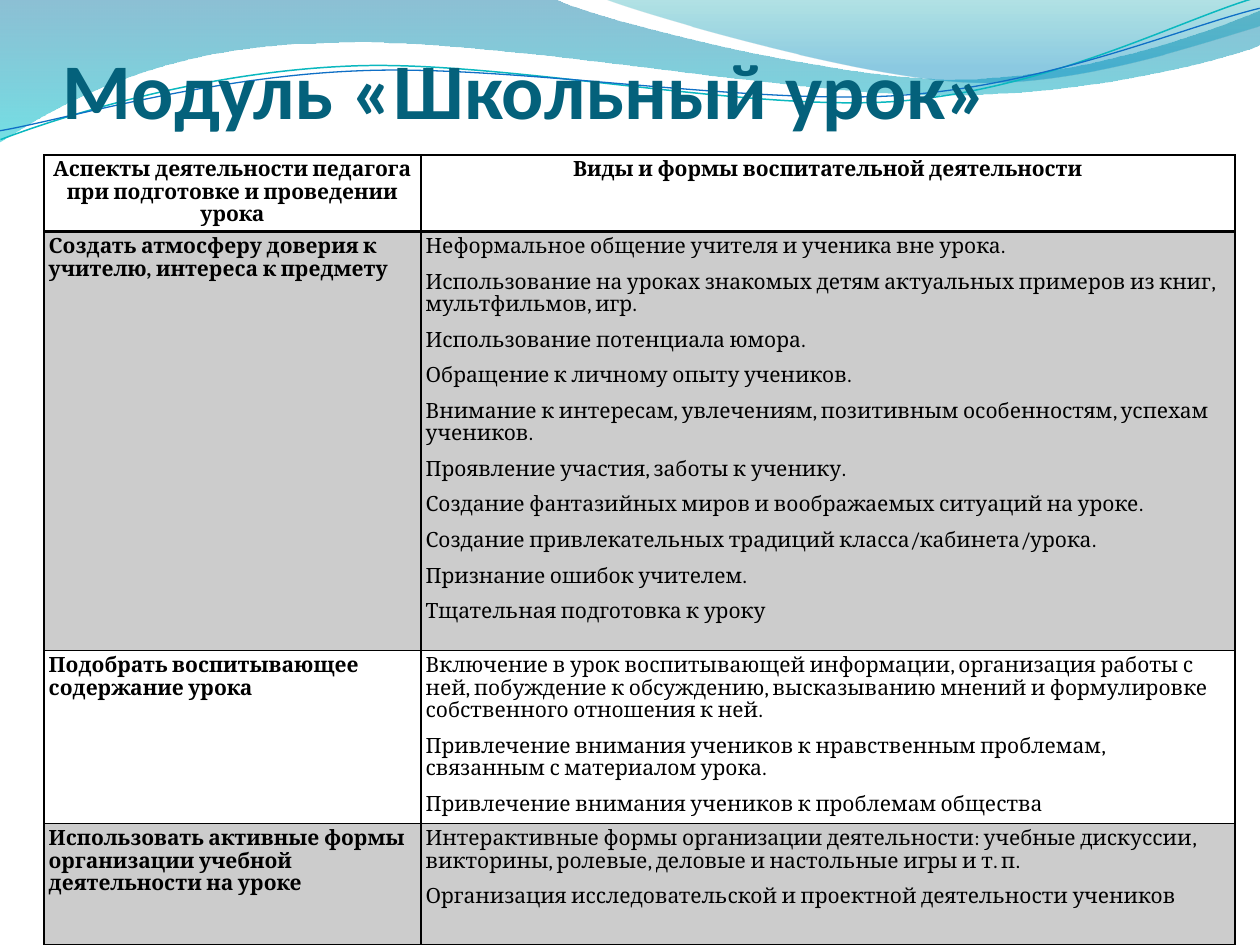
from lxml.etree import SubElement
from pptx import Presentation
from pptx.dml.color import RGBColor
from pptx.enum.text import MSO_ANCHOR, PP_ALIGN
from pptx.oxml.ns import qn
from pptx.util import Emu, Pt

EMU_PER_PX = 914400 / 126
CURVE_TILT = 357.3
NO_BREAK_SPACE = chr(160)

BLACK = RGBColor(0x00, 0x00, 0x00)
TITLE_BLUE = RGBColor(0x04, 0x61, 0x7B)
DEEP_BLUE = RGBColor(0x00, 0x74, 0xA1)
CYAN = RGBColor(0x00, 0xC6, 0xCF)
TEAL = RGBColor(0x00, 0xA1, 0xA9)
SKY_BLUE = RGBColor(0x00, 0x8B, 0xBF)
LINE_TEAL = RGBColor(0x0A, 0xB8, 0xBF)
LINE_BLUE = RGBColor(0x0F, 0x6F, 0xC6)

WIDE_WAVE = ((0, 0), [
    (554, -1), (600, 21, 837, 79, 955, 79), (1075, 79, 1207, 33, 1260, 11),
    (1261, 45), (1239, 55, 1096, 96, 940, 95), (784, 95, 481, 35, 324, 43),
    (161, 45, 58, 105, -1, 142), (0, 0)])
RIGHT_WAVE = ((604, -1), [
    (641, 14, 859, 78, 969, 82), (1079, 87, 1211, 40, 1260, 26), (1260, 0),
    (604, -1)])
TEAL_CURVE = ((-2, 110), [
    (59, 90, 200, 52, 350, 53), (499, 53, 745, 118, 896, 114),
    (1049, 109, 1184, 45, 1260, 27)])
BLUE_CURVE = ((-2, 101), [
    (57, 94, 207, 57, 357, 58), (509, 58, 750, 112, 902, 108),
    (1052, 104, 1188, 52, 1262, 38)])

HEADER = ("Аспекты деятельности педагога при подготовке и проведении урока",
          "Виды и формы воспитательной деятельности")
ASPECTS = [
    ("Создать атмосферу доверия к учителю, интереса к предмету", [
        "Неформальное общение учителя и ученика вне урока.",
        "Использование на уроках знакомых детям актуальных примеров из книг, мультфильмов, игр.",
        "Использование потенциала юмора.",
        "Обращение к личному опыту учеников.",
        "Внимание к интересам, увлечениям, позитивным особенностям, успехам учеников.",
        "Проявление участия, заботы к ученику.",
        "Создание фантазийных миров и воображаемых ситуаций на уроке.",
        "Создание привлекательных традиций класса/кабинета/урока.",
        "Признание ошибок учителем.",
        "Тщательная подготовка к уроку"]),
    ("Подобрать воспитывающее содержание урока", [
        "Включение~в урок воспитывающей информации, организация~работы~с ней, "
        "побуждение к обсуждению, высказыванию~мнений и формулировке "
        "собственного~отношения к ней.",
        "Привлечение~внимания учеников к нравственным~проблемам, "
        "связанным~с материалом урока.",
        "Привлечение внимания учеников~к проблемам общества"]),
    ("Использовать активные формы организации учебной деятельности на уроке", [
        "Интерактивные формы организации деятельности: учебные дискуссии, "
        "викторины, ролевые, деловые и настольные игры и т. п.",
        "Организация исследовательской и проектной деятельности учеников"]),
]


def px(length):
    """Turn pixels into EMU."""
    return Emu(round(length * EMU_PER_PX))


def set_alpha(colour, percent):
    """Give a colour element an opacity."""
    SubElement(colour, qn("a:alpha")).set("val", str(percent * 1000))


class SlideWriter:
    """Hold the style and the current slide."""

    title_font = "Calibri"
    body_font = "Cambria"
    body_size = 12
    leading = Pt(12.8)
    gap = Pt(7.5)
    inset = Pt(2.7)

    def __init__(self, slide):
        """Keep the slide to draw on."""
        self.slide = slide

    def outline(self, start, segments, closed):
        """Build a freeform whose six-number segments are cubic curves."""
        builder = self.slide.shapes.build_freeform(*map(px, start))
        builder.add_line_segments(
            [(px(part[-2]), px(part[-1])) for part in segments], close=closed)
        shape = builder.convert_to_shape()
        shape.shadow.inherit = False
        for step, part in zip(shape._element.xpath(".//a:path/a:lnTo"), segments):
            if len(part) == 6:
                step.tag = qn("a:cubicBezTo")
                for index, (x, y) in enumerate(zip(part[:4:2], part[1:4:2])):
                    point = SubElement(step, qn("a:pt"), x=str(px(x) - shape.left),
                                       y=str(px(y) - shape.top))
                    step.insert(index, point)
        return shape

    def wave(self, course, stops):
        """Draw a closed shape with a translucent downward gradient."""
        shape = self.outline(*course, True)
        shape.line.fill.background()
        shape.fill.gradient()
        shape.fill.gradient_angle = 270
        for stop, (position, colour, opacity) in zip(shape.fill.gradient_stops, stops):
            stop.position = position
            stop.color.rgb = colour
        colours = shape._element.xpath(".//a:gs/a:srgbClr")
        for element, (position, colour, opacity) in zip(colours, stops):
            set_alpha(element, opacity)

    def curve(self, course, colour, width):
        """Draw an open tilted line."""
        shape = self.outline(*course, False)
        shape.rotation = CURVE_TILT
        shape.fill.background()
        shape.line.color.rgb = colour
        shape.line.width = Pt(width)

    def style(self, para, font, size, colour, bold):
        """Format the runs of a paragraph."""
        for span in para.runs:
            span.font.name = font
            span.font.size = Pt(size)
            span.font.bold = bold
            span.font.color.rgb = colour

    def title(self, text, left, top, width, height):
        """Add the heading."""
        box = self.slide.shapes.add_textbox(px(left), px(top), px(width), px(height))
        frame = box.text_frame
        frame.word_wrap = True
        frame.vertical_anchor = MSO_ANCHOR.BOTTOM
        frame.margin_left = frame.margin_right = frame.margin_bottom = 0
        frame.margin_top = px(6)
        frame.text = text
        self.style(frame.paragraphs[0], self.title_font, 45, TITLE_BLUE, True)

    def borders(self, cell, top, bottom):
        """Set black borders with the given top and bottom widths."""
        properties = cell._tc.get_or_add_tcPr()
        for side, width in (("L", 1), ("R", 1), ("T", top), ("B", bottom)):
            line = SubElement(properties, qn(f"a:ln{side}"), w=str(Pt(width)))
            fill = SubElement(line, qn("a:solidFill"))
            SubElement(fill, qn("a:srgbClr"), val=str(BLACK))

    def cell(self, cell, lines, header, bold, shaded):
        """Fill one table cell."""
        cell.margin_left = cell.margin_right = self.inset
        cell.margin_top = cell.margin_bottom = self.inset
        cell.text_frame.text = "\n".join(lines).replace("~", NO_BREAK_SPACE)
        for para in cell.text_frame.paragraphs:
            para.alignment = PP_ALIGN.CENTER if header else PP_ALIGN.LEFT
            para.line_spacing = self.leading
            para.space_after = Pt(0) if header else self.gap
            self.style(para, self.body_font, self.body_size, BLACK, bold)
        if shaded:
            cell.fill.solid()
            cell.fill.fore_color.rgb = BLACK
            set_alpha(cell._tc.xpath("./a:tcPr/a:solidFill/a:srgbClr")[0], 20)
        else:
            cell.fill.background()

    def table(self, rows, left, top, widths, heights):
        """Add a table with a header row and alternate shaded rows."""
        table = self.slide.shapes.add_table(
            len(rows), len(widths), px(left), px(top),
            px(sum(widths)), px(sum(heights))).table
        table.first_row = table.horz_banding = False
        for column, width in zip(table.columns, widths):
            column.width = px(width)
        for index, (row, height) in enumerate(zip(rows, heights)):
            table.rows[index].height = px(height)
            for position, lines in enumerate(row):
                cell = table.cell(index, position)
                header = index == 0
                self.borders(cell, 2 if index == 1 else 1, 2 if header else 1)
                self.cell(cell, lines, header, header or position == 0, index % 2 == 1)


def main():
    """Build the slide and save the deck."""
    deck = Presentation()
    deck.slide_width, deck.slide_height = px(1260), px(945)
    page = SlideWriter(deck.slides.add_slide(deck.slide_layouts[6]))
    page.wave(WIDE_WAVE, [(0, DEEP_BLUE, 45), (1, CYAN, 55)])
    page.wave(RIGHT_WAVE, [(0, TEAL, 30), (0.8, SKY_BLUE, 45)])
    page.curve(TEAL_CURVE, LINE_TEAL, 0.85)
    page.curve(BLUE_CURVE, LINE_BLUE, 0.75)
    page.title("Модуль «Школьный урок»", 63, 38, 1134, 97)
    rows = [[[text] for text in HEADER]] + [[[aspect], forms] for aspect, forms in ASPECTS]
    page.table(rows, 44, 155, [377, 814], [50, 419, 173, 121])
    deck.save("out.pptx")


if __name__ == "__main__":
    main()
